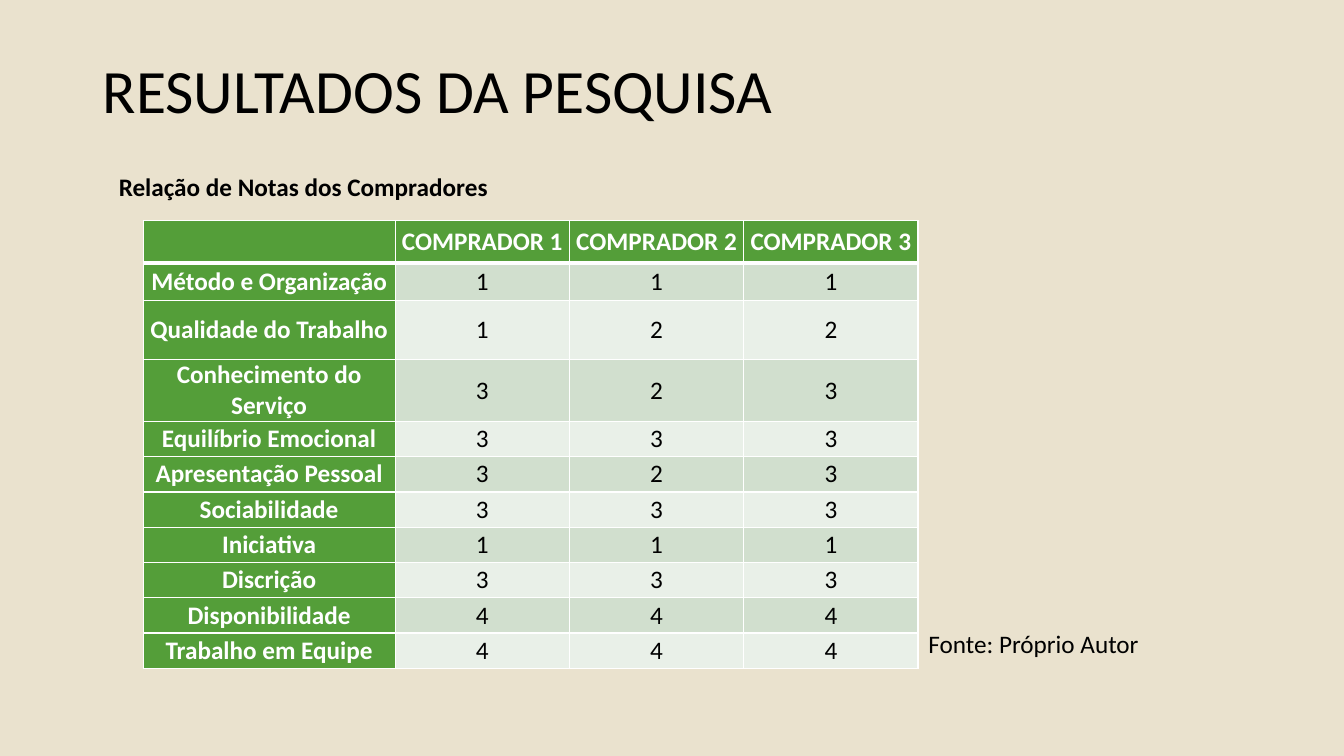
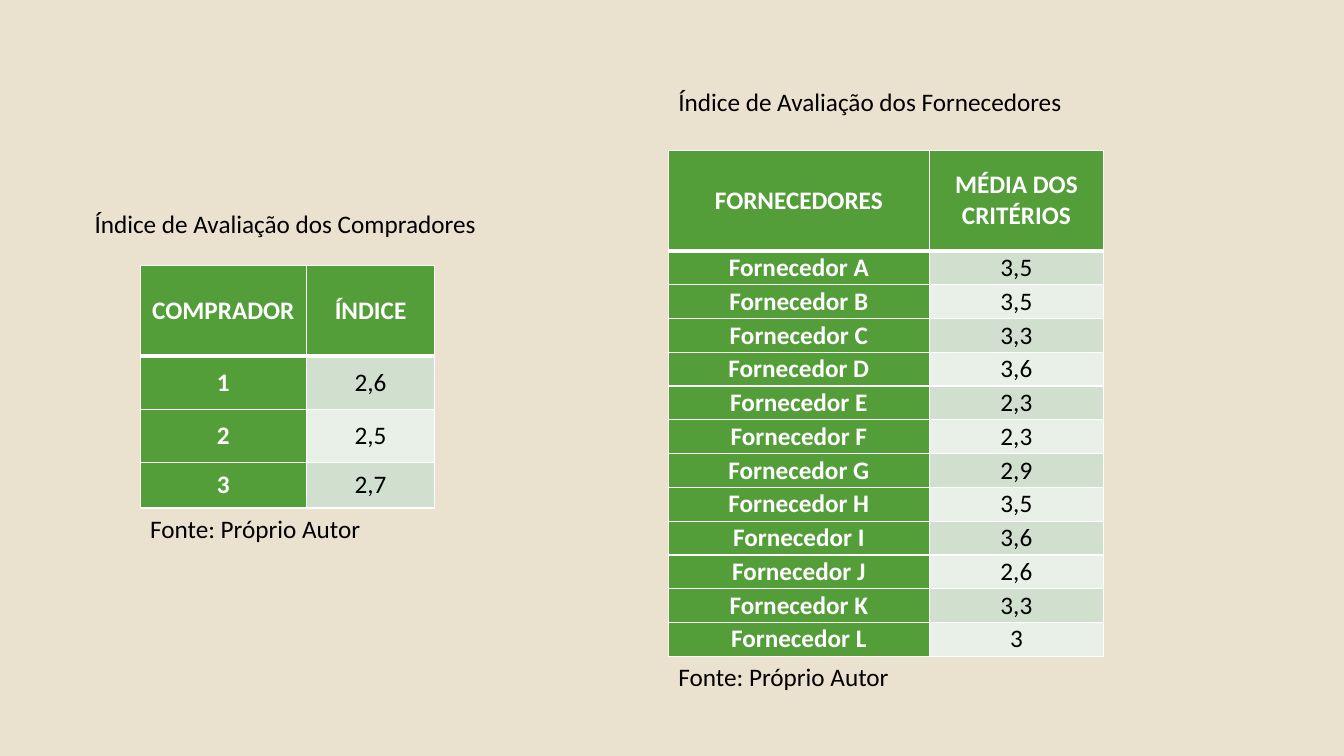
from pptx import Presentation
from pptx.dml.color import RGBColor
from pptx.enum.text import MSO_ANCHOR, PP_ALIGN
from pptx.oxml import parse_xml
from pptx.oxml.ns import nsdecls
from pptx.util import Inches, Pt

# Shared colours and text formats
SAND, GREEN, WHITE, BLACK = "EAE2CE", "549E39", "FFFFFF", "000000"
BANDS = ["D1DFCE", "E9F0E8"]
BODY = {"name": "Calibri", "size": Pt(18), "bold": False}
STRONG = BODY | {"bold": True}
TITLE = BODY | {"size": Pt(44)}
CELL = {"vertical_anchor": MSO_ANCHOR.MIDDLE, "margin_left": Inches(0.05),
        "margin_right": Inches(0.05), "margin_top": 0, "margin_bottom": 0}
SOURCE = "Fonte: Próprio Autor"

# Lengths below are percentages of the slide's width and height
deck = Presentation()
deck.slide_width, deck.slide_height = Inches(13.33), Inches(7.5)
ACROSS, DOWN = deck.slide_width / 100, deck.slide_height / 100
VALUE_COLUMN = 12.97
CAPTION_HEIGHT, SOURCE_WIDTH, SOURCE_HEIGHT = 5.33, 19.13, 9.47

background = deck.slide_master.background.fill
background.solid()
background.fore_color.rgb = RGBColor.from_string(SAND)


def write(holder, text, look, color):
    """Fill a box or a cell with one formatted paragraph."""
    para = holder.text_frame.paragraphs[0]
    span = para.add_run()
    span.text = text
    for name, value in look.items():
        setattr(span.font, name, value)
    span.font.color.rgb = RGBColor.from_string(color)
    return para


def add_grid(page, left, top, columns, heights, rows):
    """Add a table with a green header row and first column."""
    table = page.shapes.add_table(
        len(rows), len(columns), int(left * ACROSS), int(top * DOWN),
        int(sum(columns) * ACROSS), int(sum(heights) * DOWN)).table
    table.horz_banding = False
    for column, width in zip(table.columns, columns):
        column.width = int(width * ACROSS)
    for r, (height, texts) in enumerate(zip(heights, rows)):
        table.rows[r].height = int(height * DOWN)
        for c, text in enumerate(texts):
            cell = table.cell(r, c)
            heading = r == 0 or c == 0
            for name, value in CELL.items():
                setattr(cell, name, value)
            cell.fill.solid()
            cell.fill.fore_color.rgb = RGBColor.from_string(
                GREEN if heading else BANDS[(r - 1) % 2])
            # White borders, thicker under the header
            points = {"L": 1, "R": 1, "T": 3 if r == 1 else 1, "B": 3 if r == 0 else 1}
            for place, (side, weight) in enumerate(points.items()):
                cell._tc.get_or_add_tcPr().insert(place, parse_xml(
                    f'<a:ln{side} {nsdecls("a")} w="{Pt(weight)}"><a:solidFill>'
                    f'<a:srgbClr val="{WHITE}"/></a:solidFill></a:ln{side}>'))
            para = write(cell, text, STRONG if heading else BODY,
                         WHITE if heading else BLACK)
            para.alignment = PP_ALIGN.CENTER


# Scores of each buyer, one digit per buyer
scores = {
    "Método e Organização": "111", "Qualidade do Trabalho": "122",
    "Conhecimento do Serviço": "323", "Equilíbrio Emocional": "333",
    "Apresentação Pessoal": "323", "Sociabilidade": "333", "Iniciativa": "111",
    "Discrição": "333", "Disponibilidade": "444", "Trabalho em Equipe": "444"}
buyers = "123"
suppliers = zip("ABCDEFGHIJKL",
                "3,5 3,5 3,3 3,6 2,3 2,3 2,9 3,5 3,6 2,6 3,3 3".split())

# Tables: left, top, column widths, row heights, rows
score_grid = (10.65, 29.2, [18.75] + [VALUE_COLUMN] * 3,
              [5.6, 4.93, 7.87, 7.87] + [4.67] * 7,
              [["", *(f"COMPRADOR {buyer}" for buyer in buyers)]]
              + [[name, *marks] for name, marks in scores.items()])
supplier_grid = (49.74, 19.87, [19.4, VALUE_COLUMN], [13.33] + [4.47] * 12,
                 [["FORNECEDORES", "MÉDIA DOS CRITÉRIOS"]]
                 + [[f"Fornecedor {letter}", mean] for letter, mean in suppliers])
buyer_grid = (10.43, 35.07, [12.38, 9.53], [12, 7.07, 7.07, 6],
              [["COMPRADOR", "ÍNDICE"], *zip(buyers, ["2,6", "2,5", "2,7"])])

# Boxes: text, format, left, top, width, height
score_boxes = [
    ("RESULTADOS DA PESQUISA", TITLE, 6.9, 2.67, 86.27, 19.33),
    ("Relação de Notas dos Compradores", STRONG, 8.1, 22, 60.24, CAPTION_HEIGHT),
    (SOURCE, BODY, 68.34, 82.4, SOURCE_WIDTH, SOURCE_HEIGHT)]
index_boxes = [
    ("Índice de Avaliação dos Compradores", BODY, 6.3, 26.93, 32.33, CAPTION_HEIGHT),
    ("Índice de Avaliação dos Fornecedores", BODY, 49.74, 10.8, 32.33, CAPTION_HEIGHT)]
# Each index table has its source right below it
for left, top, columns, heights, rows in (supplier_grid, buyer_grid):
    index_boxes.append((SOURCE, BODY, left, top + sum(heights),
                        SOURCE_WIDTH, SOURCE_HEIGHT))

# Build the pages
for grids, boxes in [([score_grid], score_boxes),
                     ([supplier_grid, buyer_grid], index_boxes)]:
    page = deck.slides.add_slide(deck.slide_layouts[6])
    for grid in grids:
        add_grid(page, *grid)
    for text, look, left, top, width, height in boxes:
        box = page.shapes.add_textbox(int(left * ACROSS), int(top * DOWN),
                                      int(width * ACROSS), int(height * DOWN))
        box.text_frame.word_wrap = True
        para = write(box, text, look, BLACK)
        if look is TITLE:
            box.text_frame.vertical_anchor = MSO_ANCHOR.MIDDLE
            para.line_spacing = 0.9

deck.save("out.pptx")
